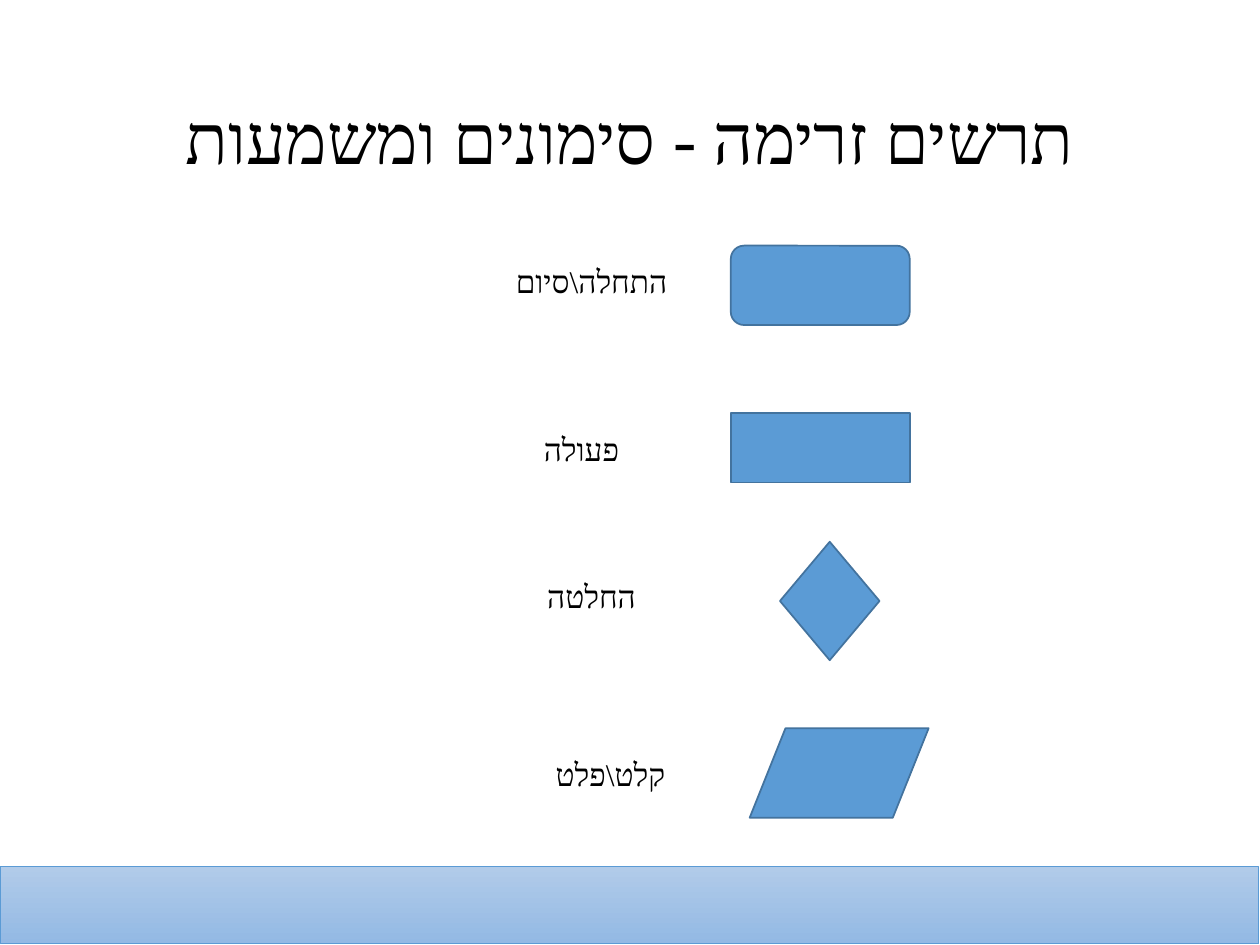
from lxml import etree
from pptx import Presentation
from pptx.dml.color import RGBColor
from pptx.enum import shapes, text
from pptx.oxml import ns
from pptx.util import Inches, Pt

COLORS = {
    "symbol": "5B9BD5",
    "outline": "43739E",
    "text": "000000",
    "band_top": "B1CBE9",
    "band_bottom": "93B9E4",
}
FONT = "Calibri"
HEBREW_FONT = "Times New Roman"


def color(key):
    return RGBColor.from_string(COLORS[key])


def add_text(parent, box, wording, size):
    label = parent.add_textbox(*map(Inches, box))
    frame = label.text_frame
    frame.word_wrap = True
    frame.vertical_anchor = text.MSO_ANCHOR.MIDDLE
    paragraph = frame.paragraphs[0]
    paragraph.text = wording
    paragraph.alignment = text.PP_ALIGN.CENTER
    paragraph.font.size = Pt(size)
    paragraph.font.name = FONT
    paragraph.font.color.rgb = color("text")
    defaults = paragraph._p.pPr.find(ns.qn("a:defRPr"))
    etree.SubElement(defaults, ns.qn("a:cs")).set("typeface", HEBREW_FONT)
    return paragraph


prs = Presentation()
prs.slide_width, prs.slide_height = Inches(10), Inches(7.5)
slide = prs.slides.add_slide(prs.slide_layouts[6])

band = slide.shapes.add_shape(
    shapes.MSO_SHAPE.RECTANGLE, Inches(0), Inches(6.88), Inches(9.99), Inches(0.61)
)
band.shadow.inherit = False
band.fill.gradient()
band.fill.gradient_angle = 270
for stop, key in zip(band.fill.gradient_stops, ("band_top", "band_bottom")):
    stop.color.rgb = color(key)
band.line.color.rgb = color("symbol")
band.line.width = Pt(0.5)

title = add_text(slide.shapes, (0.69, 0.4, 8.62, 1.45), "תרשים זרימה - סימונים ומשמעות", 40)
title.line_spacing = 0.9
title._p.pPr.set("rtl", "1")

kinds = shapes.MSO_SHAPE
legend = [
    (kinds.RECTANGLE, (5.8, 3.28, 1.42, 0.55), "פעולה", 3.83, 3.36),
    (kinds.FLOWCHART_DATA, (5.95, 5.78, 1.42, 0.71), "קלט\\פלט", 4.06, 5.94),
    (kinds.FLOWCHART_DECISION, (6.19, 4.3, 0.79, 0.94), "החלטה", 3.91, 4.53),
    (kinds.FLOWCHART_ALTERNATE_PROCESS, (5.8, 1.95, 1.42, 0.63), "התחלה\\סיום", 3.91, 2.03),
]
for kind, box, meaning, left, top in legend:
    entry = slide.shapes.add_group_shape()
    symbol = entry.shapes.add_shape(kind, *map(Inches, box))
    symbol.shadow.inherit = False
    symbol.fill.solid()
    symbol.fill.fore_color.rgb = color("symbol")
    symbol.line.color.rgb = color("outline")
    symbol.line.width = Pt(1)
    add_text(entry.shapes, (left, top, 1.57, 0.4), meaning, 18)

prs.save("out.pptx")
